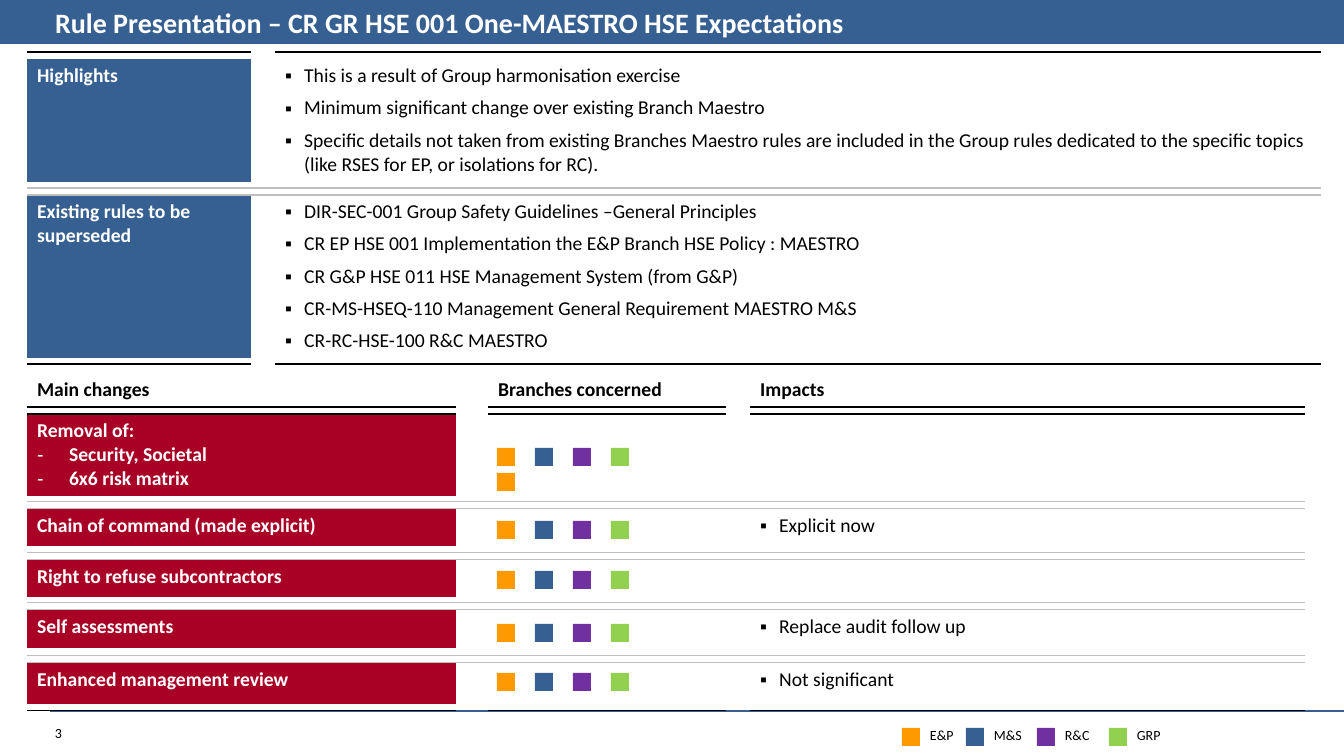
from dataclasses import dataclass
from typing import Any, Optional

from lxml.etree import SubElement
from pptx import Presentation
from pptx.dml.color import RGBColor
from pptx.enum.shapes import MSO_CONNECTOR, MSO_SHAPE
from pptx.enum.text import MSO_ANCHOR, MSO_AUTO_SIZE, PP_ALIGN
from pptx.oxml.ns import qn
from pptx.util import Emu, Pt


@dataclass(frozen=True)
class Theme:
    font: str = "Calibri"
    blue: str = "376092"
    red: str = "A90025"
    orange: str = "FF9900"
    purple: str = "7030A0"
    green: str = "92D050"
    black: str = "000000"
    white: str = "FFFFFF"
    grey: str = "BFBFBF"
    title: int = 20
    text: int = 14
    small: int = 10
    spacer: int = 2


@dataclass(frozen=True)
class Para:
    text: str
    color: str
    bold: bool = False
    bullet: str = ""
    indent: int = 0
    after: int = 0


@dataclass(frozen=True)
class Row:
    height: int
    cells: tuple[tuple[Para, ...], ...] = ()
    label_fill: Optional[str] = None
    below: Optional[str] = None
    anchor: MSO_ANCHOR = MSO_ANCHOR.TOP


@dataclass(frozen=True)
class Branch:
    name: str
    color: str
    legend_x: int


T = Theme()
NO_GRID = "{2D5ABB26-0587-4C30-8999-92F81FD0307C}"
SQUARE, SQUARE_X, SQUARE_STEP = 18, 497, 38
BRANCHES = (
    Branch("E&P", T.orange, 902),
    Branch("M&S", T.blue, 966),
    Branch("R&C", T.purple, 1037),
    Branch("GRP", T.green, 1109),
)


def px(n: int) -> Emu:
    return Emu(round(n * 914400 / 100.8))


def box(*lengths: int) -> list[Emu]:
    return [px(n) for n in lengths]


def assign(obj: Any, **values: Any) -> None:
    for name, value in values.items():
        setattr(obj, name, value)


def add_run(p: Any, text: str, size: int, color: str, bold: bool = False) -> None:
    r = p.add_run()
    r.text = text
    assign(r.font, name=T.font, size=Pt(size), bold=bold)
    r.font.color.rgb = RGBColor.from_string(color)


def labels(*texts: str) -> tuple[Para, ...]:
    return tuple(Para(text, T.white, True) for text in texts)


def dashes(*texts: str) -> tuple[Para, ...]:
    return tuple(Para(text, T.white, True, "-", 32) for text in texts)


def bullets(*texts: str) -> tuple[Para, ...]:
    return tuple(Para(text, T.black, False, "▪", 19, 6) for text in texts)


def heads(*texts: str) -> tuple[tuple[Para, ...], ...]:
    return tuple((Para(text, T.black, True),) for text in texts)


def add_rect(s: Any, x: int, y: int, w: int, h: int, color: str) -> None:
    sp = s.shapes.add_shape(MSO_SHAPE.RECTANGLE, *box(x, y, w, h))
    sp.shadow.inherit = False
    sp.fill.solid()
    sp.fill.fore_color.rgb = RGBColor.from_string(color)
    sp.line.fill.background()


def add_text(s: Any, x: int, y: int, w: int, h: int, text: str, wrap: bool, **margins: int) -> None:
    tf = s.shapes.add_textbox(*box(x, y, w, h)).text_frame
    assign(tf, word_wrap=wrap, **margins)
    add_run(tf.paragraphs[0], text, T.small, T.black)


def set_border(cell: Any, side: str, color: Optional[str]) -> None:
    if color:
        ln = SubElement(cell._tc.get_or_add_tcPr(), qn(f"a:{side}"), w=str(Pt(1)))
        SubElement(SubElement(ln, qn("a:solidFill")), qn("a:srgbClr"), val=color)


def fill_text(tf: Any, paras: tuple[Para, ...]) -> None:
    for i, para in enumerate(paras):
        p = tf.add_paragraph() if i else tf.paragraphs[0]
        if para.bullet:
            pPr = p._p.get_or_add_pPr()
            indent = px(para.indent)
            pPr.set("marL", str(indent))
            pPr.set("indent", str(-indent))
            SubElement(pPr, qn("a:buFont"), typeface="Arial")
            SubElement(pPr, qn("a:buChar"), char=para.bullet)
        p.space_after = Pt(para.after)
        add_run(p, para.text, T.text, para.color, para.bold)


def add_grid(s: Any, x: int, y: int, widths: list[int], rows: list[Row], top: Optional[str] = None) -> None:
    size = box(x, y, sum(widths), sum(row.height for row in rows))
    table = s.shapes.add_table(len(rows), len(widths), *size).table
    assign(table, first_row=False, horz_banding=False)
    table._tbl.tblPr.find(qn("a:tableStyleId")).text = NO_GRID
    for column, width in zip(table.columns, widths):
        column.width = px(width)
    above = top
    for i, row in enumerate(rows):
        table.rows[i].height = px(row.height)
        for c in range(len(widths)):
            cell = table.cell(i, c)
            is_gap = c % 2 == 1
            for side, color in (("lnT", above), ("lnB", row.below)):
                set_border(cell, side, None if is_gap and color == T.black else color)
            cell.fill.background()
            if c == 0 and row.label_fill:
                cell.fill.solid()
                cell.fill.fore_color.rgb = RGBColor.from_string(row.label_fill)
            paras = () if is_gap or c // 2 >= len(row.cells) else row.cells[c // 2]
            if paras:
                cell.vertical_anchor = row.anchor
                fill_text(cell.text_frame, paras)
            else:
                assign(cell, margin_top=0, margin_bottom=0)
                p = cell.text_frame.paragraphs[0]._p
                SubElement(p, qn("a:endParaRPr"), sz=str(T.spacer * 100))
        above = row.below


def add_frame(s: Any) -> None:
    line = s.shapes.add_connector(MSO_CONNECTOR.STRAIGHT, *box(50, 711, 1344, 711))
    line.line.width = Pt(0.75)
    line.line.color.rgb = RGBColor.from_string(T.blue)
    SubElement(line._element.spPr, qn("a:effectLst"))
    add_text(s, 45, 720, 72, 27, "3", True)
    add_rect(s, 0, 0, 1344, 44, T.blue)
    title = s.shapes.title
    assign(title, **dict(zip(("left", "top", "width", "height"), box(45, 0, 1055, 44))))
    tf = title.text_frame
    assign(tf, word_wrap=True, auto_size=MSO_AUTO_SIZE.NONE, vertical_anchor=MSO_ANCHOR.MIDDLE)
    p = tf.paragraphs[0]
    p.alignment = PP_ALIGN.LEFT
    add_run(p, "Rule Presentation – CR GR HSE 001 One-MAESTRO HSE Expectations", T.title, T.white, True)
    s.shapes._spTree.append(title._element)


def add_branch_squares(s: Any) -> None:
    for y, count in ((448, 4), (473, 1), (521, 4), (571, 4), (624, 4), (673, 4)):
        for i, branch in enumerate(BRANCHES[:count]):
            add_rect(s, SQUARE_X + i * SQUARE_STEP, y, SQUARE, SQUARE, branch.color)
    for branch in BRANCHES:
        add_rect(s, branch.legend_x, 728, SQUARE, SQUARE, branch.color)
        add_text(s, branch.legend_x + 28, 727, 28, 17, branch.name, False,
                 margin_left=0, margin_top=0, margin_right=0, margin_bottom=0)


def main() -> None:
    prs = Presentation()
    assign(prs, slide_width=px(1344), slide_height=px(756))
    s = prs.slides.add_slide(prs.slide_layouts[5])
    add_frame(s)
    highlights = bullets(
        "This is a result of Group harmonisation exercise",
        "Minimum significant change over existing Branch Maestro",
        "Specific details not taken from existing Branches Maestro rules are included in the Group rules "
        "dedicated to the specific topics (like RSES for EP, or isolations for RC).")
    superseded = bullets(
        "DIR-SEC-001 Group Safety Guidelines –General Principles",
        "CR EP HSE 001 Implementation the E&P Branch HSE Policy : MAESTRO",
        "CR G&P HSE 011 HSE Management System (from G&P)",
        "CR-MS-HSEQ-110 Management General Requirement MAESTRO M&S",
        "CR-RC-HSE-100 R&C MAESTRO")
    add_grid(s, 27, 52, [224, 8, 1046], [
        Row(7), Row(123, (labels("Highlights"), highlights), T.blue), Row(6, below=T.grey),
        Row(7), Row(163, (labels("Existing rules to be superseded"), superseded), T.blue),
        Row(6, below=T.black)], T.black)
    changes = (
        (81, labels("Removal of:") + dashes("Security, Societal", "6x6 risk matrix"), ()),
        (37, labels("Chain of command (made explicit)"), bullets("Explicit now")),
        (37, labels("Right to refuse subcontractors"), ()),
        (39, labels("Self assessments"), bullets("Replace audit follow up")),
        (42, labels("Enhanced management review"), bullets("Not significant")))
    rows = [Row(37, heads("Main changes", "Branches concerned", "Impacts"),
                below=T.black, anchor=MSO_ANCHOR.BOTTOM)]
    for i, (height, change, impact) in enumerate(changes):
        rule = T.black if i == len(changes) - 1 else T.grey
        rows += [Row(7), Row(height, (change, (), impact), T.red), Row(7 if i in (1, 3) else 6, below=rule)]
    add_grid(s, 27, 370, [429, 32, 238, 24, 555], rows)
    add_branch_squares(s)
    prs.save("out.pptx")


if __name__ == "__main__":
    main()
